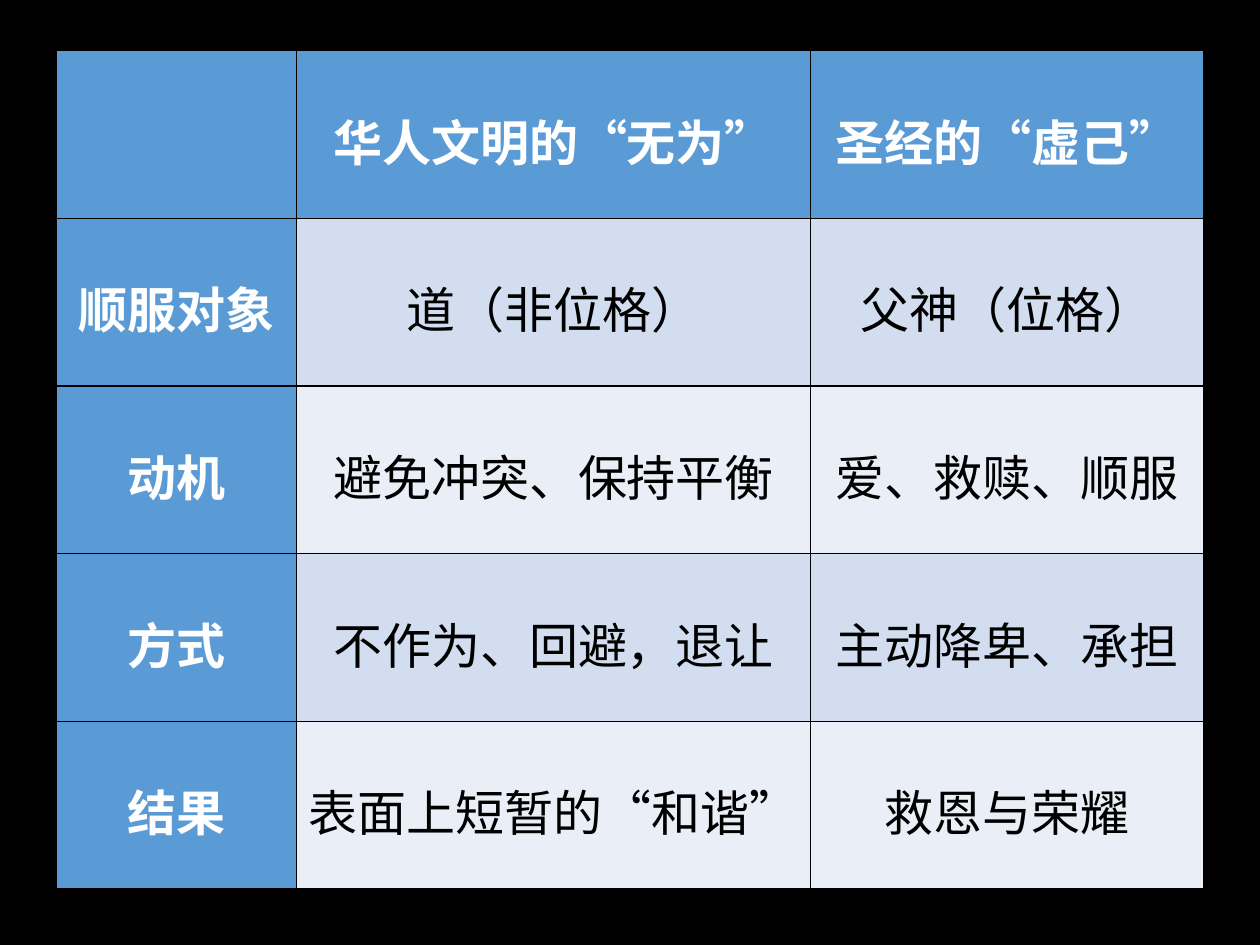
"""Build a slide with a table comparing two ideas of yielding."""
from dataclasses import dataclass

from pptx import Presentation
from pptx.dml.color import RGBColor as RGB
from pptx.enum.text import MSO_ANCHOR as ANCHOR, PP_ALIGN as ALIGN
from pptx.oxml.ns import qn
from pptx.util import Cm, Pt
from lxml.etree import SubElement


@dataclass(frozen=True)
class Theme:
    font: str = "Noto Sans CJK SC"
    size: int = 28
    spacing: float = 1.15
    border: int = 1
    background: str = "000000"
    line: str = "000000"
    text: str = "000000"
    header_text: str = "FFFFFF"
    header: str = "5B9BD5"
    bands: tuple = ("D2DEEF", "EAEFF7")


THEME = Theme()
COLUMNS = (4.85, 10.36, 7.92)
ROW_HEIGHT = 3.38
ROWS = (
    ("", "华人文明的“无为”", "圣经的“虚己”"),
    ("顺服对象", "道（非位格）", "父神（位格）"),
    ("动机", "避免冲突、保持平衡", "爱、救赎、顺服"),
    ("方式", "不作为、回避，退让", "主动降卑、承担"),
    ("结果", "表面上短暂的“和谐”", "救恩与荣耀"),
)


def set_borders(cell):
    tc_pr = cell._tc.get_or_add_tcPr()
    for side in ("a:lnL", "a:lnR", "a:lnT", "a:lnB"):
        ln = SubElement(tc_pr, qn(side), w=str(Pt(THEME.border)))
        fill = SubElement(ln, qn("a:solidFill"))
        SubElement(fill, qn("a:srgbClr"), val=THEME.line)


def add_run(p, text, color, bold):
    r = p.add_run()
    r.text = text
    r.font.size = Pt(THEME.size)
    r.font.bold = bold
    r.font.color.rgb = RGB.from_string(color)
    r.font.name = THEME.font
    SubElement(r.font._element, qn("a:ea"), typeface=THEME.font)


def fill_cell(cell, text, fill, color, bold):
    set_borders(cell)
    cell.fill.solid()
    cell.fill.fore_color.rgb = RGB.from_string(fill)
    cell.vertical_anchor = ANCHOR.MIDDLE
    cell.margin_left = cell.margin_right = Cm(0.03)
    cell.margin_top = cell.margin_bottom = Cm(0.03)
    p = cell.text_frame.paragraphs[0]
    p.alignment = ALIGN.CENTER
    p.line_spacing = THEME.spacing
    if text:
        add_run(p, text, color, bold)


def add_comparison(slide):
    frame = slide.shapes.add_table(
        len(ROWS), len(COLUMNS), Cm(1.13), Cm(1.02),
        Cm(sum(COLUMNS)), Cm(ROW_HEIGHT * len(ROWS)))
    table = frame.table
    for column, width in zip(table.columns, COLUMNS):
        column.width = Cm(width)
    for i, texts in enumerate(ROWS):
        table.rows[i].height = Cm(ROW_HEIGHT)
        for j, text in enumerate(texts):
            is_header = i == 0 or j == 0
            fill = THEME.header if is_header else THEME.bands[(i - 1) % 2]
            color = THEME.header_text if is_header else THEME.text
            fill_cell(table.cell(i, j), text, fill, color, is_header)


def main():
    prs = Presentation()
    prs.slide_width, prs.slide_height = Cm(25.4), Cm(19.05)
    slide = prs.slides.add_slide(prs.slide_layouts[6])
    background = slide.background.fill
    background.solid()
    background.fore_color.rgb = RGB.from_string(THEME.background)
    add_comparison(slide)
    prs.save("out.pptx")


if __name__ == "__main__":
    main()
